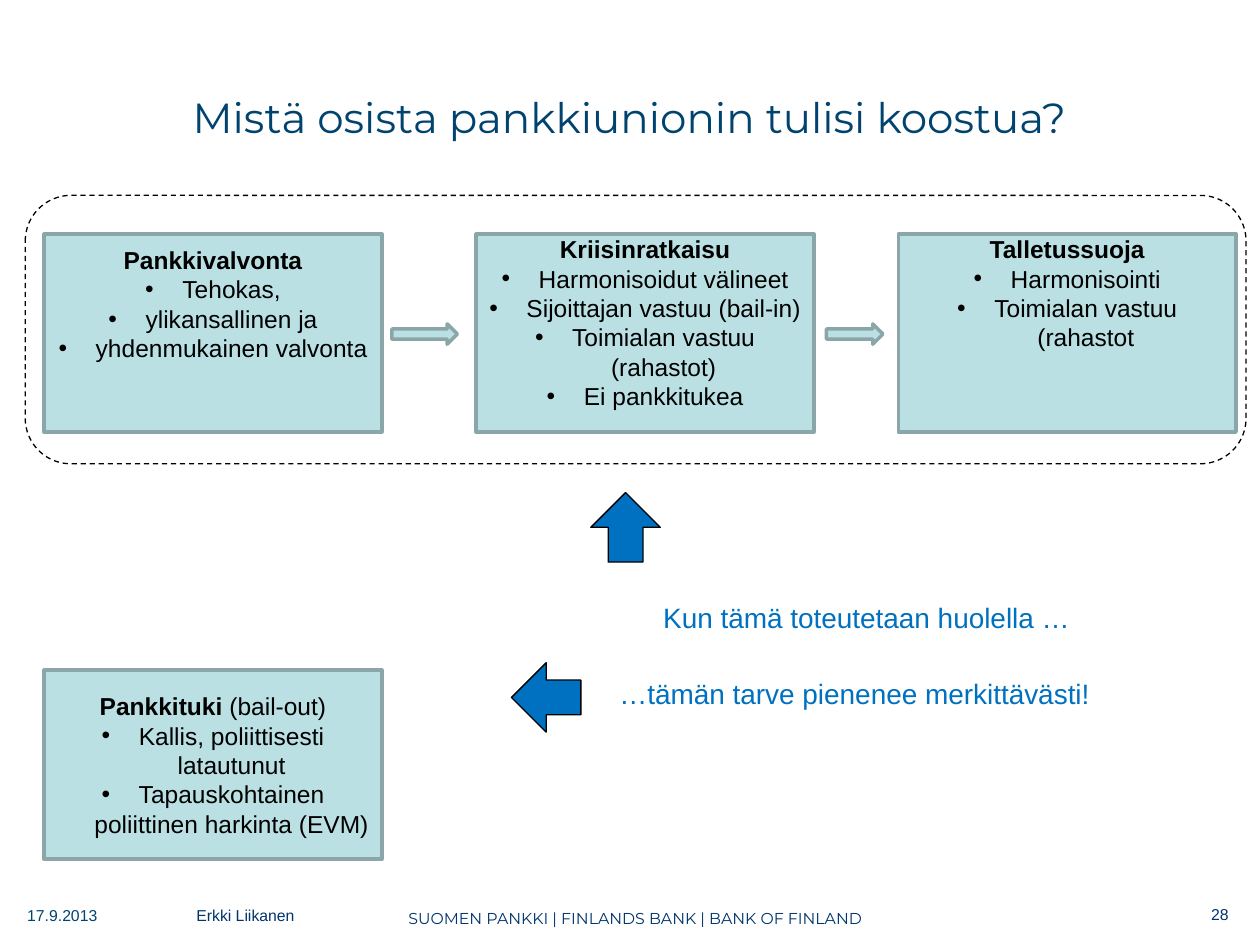
import dataclasses

import pptx
import pptx.dml.color
import pptx.enum.dml
import pptx.enum.shapes
import pptx.enum.text
import pptx.util
from lxml import etree
from pptx.oxml.ns import qn

Cm = pptx.util.Cm
ALIGN = pptx.enum.text.PP_ALIGN
ANCHOR = pptx.enum.text.MSO_ANCHOR
SHAPE = pptx.enum.shapes.MSO_SHAPE


@dataclasses.dataclass(frozen=True)
class Theme:
    title_color: str = "00436F"
    footer_color: str = "00356C"
    accent: str = "0070C0"
    panel_fill: str = "BBE0E3"
    panel_line: str = "8AA6A8"
    black: str = "000000"
    title_font: str = "Montserrat"
    body_font: str = "Arial"
    title_size: int = 24
    remark_size: int = 16
    body_size: int = 14
    footer_size: int = 9


THEME = Theme()


def rgb(value):
    return pptx.dml.color.RGBColor.from_string(value)


def style_run(span, size, color, name=THEME.body_font, bold=False):
    span.font.size = pptx.util.Pt(size)
    span.font.name = name
    span.font.bold = bold
    span.font.color.rgb = rgb(color)


def add_shape(page, kind, box, fill, line, width):
    """Add a preset shape; a fill of None leaves it hollow."""
    shape = page.shapes.add_shape(kind, *map(Cm, box))
    shape.shadow.inherit = False
    if fill:
        shape.fill.solid()
        shape.fill.fore_color.rgb = rgb(fill)
    else:
        shape.fill.background()
    shape.line.color.rgb = rgb(line)
    shape.line.width = pptx.util.Pt(width)
    return shape


def add_label(page, box, text, size, color, align=ALIGN.LEFT, name=THEME.body_font):
    frame = page.shapes.add_textbox(*map(Cm, box)).text_frame
    frame.word_wrap = True
    frame.text = text
    para = frame.paragraphs[0]
    para.alignment = align
    style_run(para.runs[0], size, color, name)


def add_bullet(para, indent):
    props = para._p.get_or_add_pPr()
    props.set("marL", str(Cm(indent)))
    props.set("indent", str(-Cm(indent)))
    etree.SubElement(props, qn("a:buFont")).set("typeface", THEME.body_font)
    etree.SubElement(props, qn("a:buChar")).set("char", "•")


def add_panel(page, box, heading, bullets, note="", top=None):
    """Add a panel with a bold heading; top is the inset of top-anchored text."""
    shape = add_shape(page, SHAPE.RECTANGLE, box, THEME.panel_fill, THEME.panel_line, 2)
    frame = shape.text_frame
    frame.word_wrap = True
    frame.margin_left = frame.margin_right = Cm(0.2)
    frame.vertical_anchor = ANCHOR.MIDDLE
    if top is not None:
        frame.vertical_anchor = ANCHOR.TOP
        frame.margin_top = Cm(top)
    frame.text = "\n".join([heading, *bullets])
    if note:
        frame.paragraphs[0].add_run().text = note
    for number, para in enumerate(frame.paragraphs):
        para.alignment = ALIGN.CENTER
        if number:
            add_bullet(para, 0.75)
        for position, span in enumerate(para.runs):
            style_run(span, THEME.body_size, THEME.black, bold=number == position == 0)


def add_title(page, box, text):
    title = page.shapes.title
    title.left, title.top, title.width, title.height = map(Cm, box)
    title.text_frame.text = text
    title.text_frame.vertical_anchor = ANCHOR.MIDDLE
    para = title.text_frame.paragraphs[0]
    para.alignment = ALIGN.CENTER
    style_run(para.runs[0], THEME.title_size, THEME.title_color, THEME.title_font)


def add_union(page, box):
    """Three pillars joined by arrows inside a dashed frame."""
    left, top, width, height = box
    pillars = [
        (0.38, 0.22, "Pankkivalvonta",
         ["Tehokas,", "ylikansallinen ja", "yhdenmukainen valvonta"]),
        (9.09, 0, "Kriisinratkaisu",
         ["Harmonisoidut välineet", "Sijoittajan vastuu (bail-in)",
          "Toimialan vastuu (rahastot)", "Ei pankkitukea"]),
        (17.6, 0, "Talletussuoja", ["Harmonisointi", "Toimialan vastuu (rahastot"]),
    ]
    for offset, inset, heading, bullets in pillars:
        add_panel(page, (left + offset, top + 0.78, 6.81, 3.99), heading, bullets, top=inset)
    for offset, length in [(7.39, 1.32), (16.15, 1.14)]:
        add_shape(page, SHAPE.RIGHT_ARROW, (left + offset, top + 2.59, length, 0.41),
                  THEME.panel_fill, THEME.panel_line, 2)
    frame = add_shape(page, SHAPE.ROUNDED_RECTANGLE, box, None, THEME.black, 0.75)
    frame.adjustments[0] = 0.17
    frame.line.dash_style = pptx.enum.dml.MSO_LINE.DASH


def add_consequence(page, box):
    """Public support panel, with remarks and arrows beside it."""
    left, top, width, height = box
    add_panel(page, (left, top + 3.58, 6.81, 3.81), "Pankkituki",
              ["Kallis, poliittisesti latautunut",
               "Tapauskohtainen poliittinen harkinta (EVM)"], note=" (bail-out)")
    for x, y, turn in [(11.02, 0, 180), (9.42, 3.43, 90)]:
        arrow = add_shape(page, SHAPE.DOWN_ARROW, (left + x, top + y, 1.4, 1.4),
                          THEME.accent, THEME.black, 0.75)
        arrow.rotation = turn
    remarks = [
        (9.8, 2.06, 11.13, "Kun tämä toteutetaan huolella …"),
        (11.02, 3.58, 10.31, "…tämän tarve pienenee merkittävästi!"),
    ]
    for x, y, length, text in remarks:
        add_label(page, (left + x, top + y, length, 0.94), text,
                  THEME.remark_size, THEME.accent, ALIGN.RIGHT)


def add_footer(page, box):
    left, top, width, height = box
    parts = [
        (1.17, 0.05, 22.66, "SUOMEN PANKKI | FINLANDS BANK | BANK OF FINLAND",
         THEME.footer_color, ALIGN.CENTER, THEME.title_font),
        (0, 0, 3.2, "17.9.2013", THEME.title_color, ALIGN.LEFT, THEME.body_font),
        (3.41, 0, 3.99, "Erkki Liikanen", THEME.footer_color, ALIGN.LEFT, THEME.body_font),
        (22, -0.03, 2.72, "28", THEME.footer_color, ALIGN.RIGHT, THEME.body_font),
    ]
    for x, y, length, text, color, align, name in parts:
        add_label(page, (left + x, top + y, length, height), text,
                  THEME.footer_size, color, align, name)


def main():
    deck = pptx.Presentation()
    deck.slide_width, deck.slide_height = Cm(25.4), Cm(19.05)
    page = deck.slides.add_slide(deck.slide_layouts.get_by_name("Title Only"))
    add_title(page, (1.47, 0.76, 22.43, 3.18), "Mistä osista pankkiunionin tulisi koostua?")
    add_union(page, (0.51, 3.94, 24.61, 5.41))
    add_consequence(page, (0.89, 9.93, 21.33, 7.39))
    add_footer(page, (0.3, 18.14, 24.72, 0.8))
    deck.save("out.pptx")


if __name__ == "__main__":
    main()
